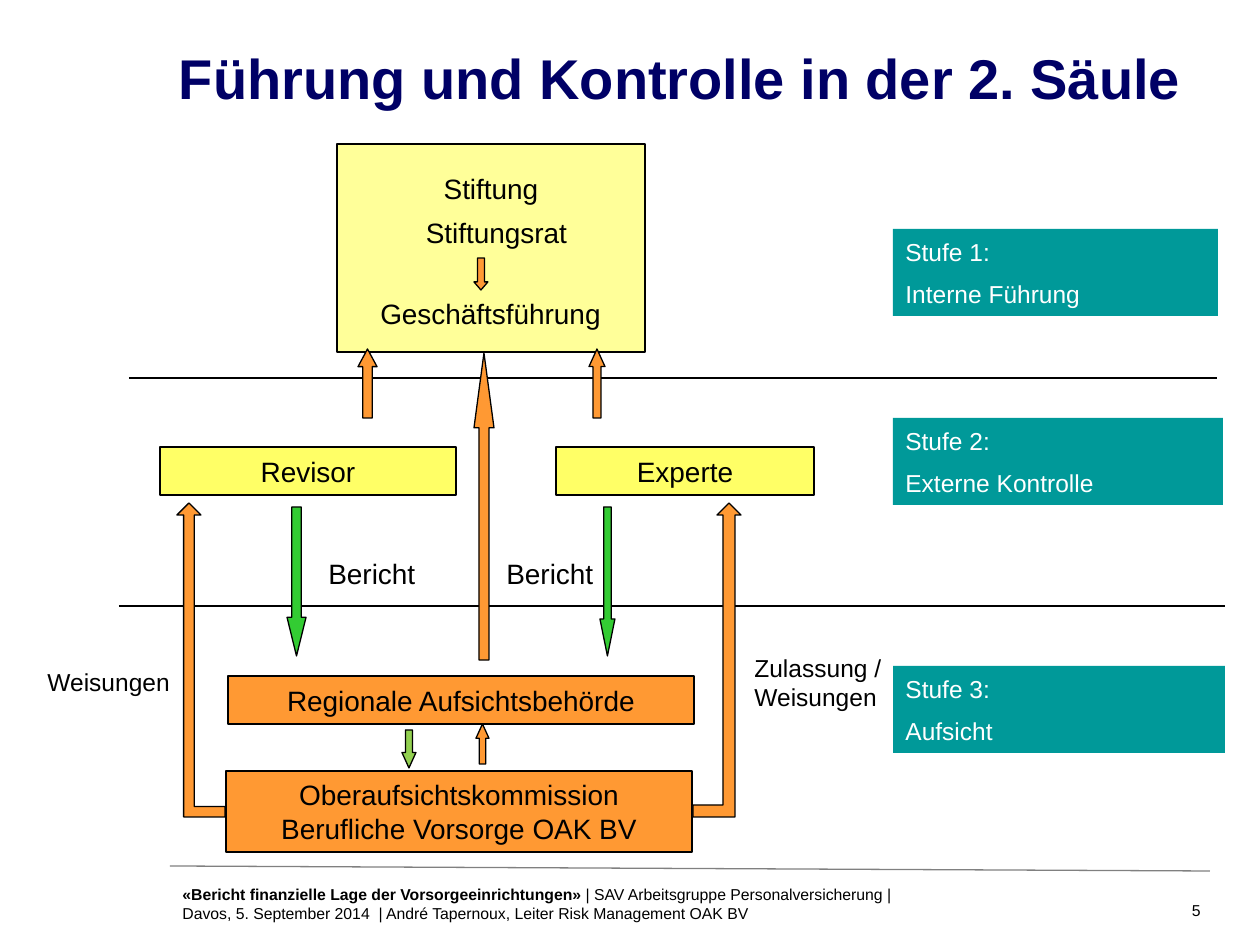
from lxml import etree
from pptx import Presentation
from pptx import util as u
from pptx.dml.color import RGBColor
from pptx.enum import shapes, text
from pptx.oxml.ns import qn

PX = 914400 / 126  # EMU in one pixel
BLACK, WHITE, NAVY, GREY = "000000", "FFFFFF", "000066", "808080"
TEAL, ORANGE, GREEN, LIME = "009999", "FF9933", "33CC33", "92D050"
PALE_YELLOW, YELLOW = "FFFF99", "FFFF66"
LEFT, CENTER, RIGHT = text.PP_ALIGN.LEFT, text.PP_ALIGN.CENTER, text.PP_ALIGN.RIGHT
UP, DOWN = shapes.MSO_SHAPE.UP_ARROW, shapes.MSO_SHAPE.DOWN_ARROW


def emu(*lengths):
    return [u.Emu(round(length * PX)) for length in lengths]


def color(value):
    return RGBColor.from_string(value)


def write(shape, paragraphs, size, ink=BLACK, align=LEFT, margins=True,
          anchor=text.MSO_ANCHOR.MIDDLE):
    """Fill a shape with paragraphs, each a list of (text, bold) spans."""
    frame = shape.text_frame
    settings = {"word_wrap": True, "vertical_anchor": anchor}
    if not margins:
        settings.update(dict.fromkeys(
            ("margin_left", "margin_right", "margin_top", "margin_bottom"), 0))
    for name, value in settings.items():
        setattr(frame, name, value)
    for index, spans in enumerate(paragraphs):
        para = frame.add_paragraph() if index else frame.paragraphs[0]
        para.alignment = align
        if index:
            para.space_before = u.Pt(size / 2)
        for words, bold in spans:
            span = para.add_run()
            span.text = words
            for name, value in {"name": "Arial", "size": u.Pt(size), "bold": bold}.items():
                setattr(span.font, name, value)
            span.font.color.rgb = color(ink)


def add_label(page, place, words, size, **style):
    box = page.shapes.add_textbox(*emu(*place))
    write(box, [[(words, style.pop("bold", False))]], size, **style)


def add_figure(page, kind, place, fill, outline=True, adjustments=()):
    figure = page.shapes.add_shape(kind, *emu(*place))
    figure.shadow.inherit = False
    figure.fill.solid()
    figure.fill.fore_color.rgb = color(fill)
    if outline:
        figure.line.color.rgb = color(BLACK)
        figure.line.width = u.Pt(0.75)
    else:
        figure.line.fill.background()
    for index, value in enumerate(adjustments):
        figure.adjustments[index] = value
    return figure


def add_box(page, place, fill, lines=(), size=16, ink=BLACK, align=CENTER, outline=True):
    box = add_figure(page, shapes.MSO_SHAPE.RECTANGLE, place, fill, outline)
    if lines:
        write(box, [[(line, False)] for line in lines], size, ink, align)


def add_rule(page, ends, ink):
    rule = page.shapes.add_connector(shapes.MSO_CONNECTOR.STRAIGHT, *emu(*ends))
    rule.line.color.rgb = color(ink)
    rule.line.width = u.Pt(0.75)
    etree.SubElement(rule._element.spPr, qn("a:effectLst"))


def add_bent_arrow(page, left, shaft, mirrored):
    arrow = add_figure(page, shapes.MSO_SHAPE.BENT_UP_ARROW, (left, 503, 48, 314),
                       ORANGE, adjustments=(shaft, 0.25, 0.25))
    if mirrored:
        arrow._element.spPr.xfrm.set("flipH", "1")


def main():
    deck = Presentation()
    deck.slide_width, deck.slide_height = emu(1260, 945)
    page = deck.slides.add_slide(deck.slide_layouts[6])

    # Title
    add_label(page, (179, 44, 1028, 136), "Führung und Kontrolle in der 2. Säule", 32,
              ink=NAVY, bold=True, margins=False, anchor=text.MSO_ANCHOR.TOP)

    # Foundation and its bodies
    add_box(page, (337, 144, 308, 208), PALE_YELLOW)
    for place, words in [((407, 165, 168, 47), "Stiftung"),
                         ((359, 209, 275, 47), "Stiftungsrat"),
                         ((367, 290, 247, 47), "Geschäftsführung")]:
        add_label(page, place, words, 16, align=CENTER)

    # Lines between the levels
    add_rule(page, (129, 378, 1217, 378), BLACK)
    add_rule(page, (119, 606, 1225, 606), BLACK)

    # Level markers
    for top, width, lines in [(229, 325, ("Stufe 1:", "Interne Führung")),
                              (418, 330, ("Stufe 2:", "Externe Kontrolle")),
                              (666, 332, ("Stufe 3:", "Aufsicht"))]:
        add_box(page, (893, top, width, 87), TEAL, lines, 14, WHITE, LEFT, False)

    # Control and supervision bodies
    for place, fill, words in [
            ((160, 447, 296, 48), YELLOW, "Revisor"),
            ((556, 447, 258, 48), YELLOW, "Experte"),
            ((228, 676, 466, 48), ORANGE, "Regionale Aufsichtsbehörde"),
            ((226, 771, 466, 81), ORANGE,
             "Oberaufsichtskommission Berufliche Vorsorge OAK BV")]:
        add_box(page, place, fill, [words])

    # Straight arrows: kind, place, fill, head length relative to width
    for kind, place, fill, head in [
            (DOWN, (287, 507, 19, 149), GREEN, 2.03),
            (DOWN, (600, 507, 15, 149), GREEN, 2.47),
            (UP, (474, 353, 20, 307), ORANGE, 3.74),
            (DOWN, (474, 258, 14, 32), ORANGE, 0.58),
            (UP, (358, 349, 19, 69), ORANGE, 0.93),
            (UP, (589, 349, 16, 69), ORANGE, 1.1),
            (UP, (476, 724, 13, 40), ORANGE, 1.1),
            (DOWN, (402, 730, 14, 38), LIME, 1.1)]:
        add_figure(page, kind, place, fill, adjustments=(0.5, head))

    # Instructions from the top supervisor
    add_bent_arrow(page, 693, 0.25, False)
    add_bent_arrow(page, 177, 0.22, True)

    # Arrow labels
    for place, words, size in [((316, 550, 149, 47), "Bericht", 16),
                               ((494, 550, 129, 47), "Bericht", 16),
                               ((742, 646, 166, 72), "Zulassung / Weisungen", 14),
                               ((35, 660, 166, 43), "Weisungen", 14)]:
        add_label(page, place, words, size)

    # Footer
    add_rule(page, (1210, 871, 170, 866), GREY)
    footer = page.shapes.add_textbox(*emu(170, 878, 760, 51))
    write(footer, [[("«Bericht finanzielle Lage der Vorsorgeeinrichtungen» ", True),
                    ("| SAV Arbeitsgruppe Personalversicherung | Davos, 5. September 2014  "
                     "| André Tapernoux, Leiter Risk Management OAK BV", False)]], 9)
    add_label(page, (1155, 900, 50, 20), "5 ", 9, align=RIGHT, margins=False)

    deck.save("out.pptx")


if __name__ == "__main__":
    main()
